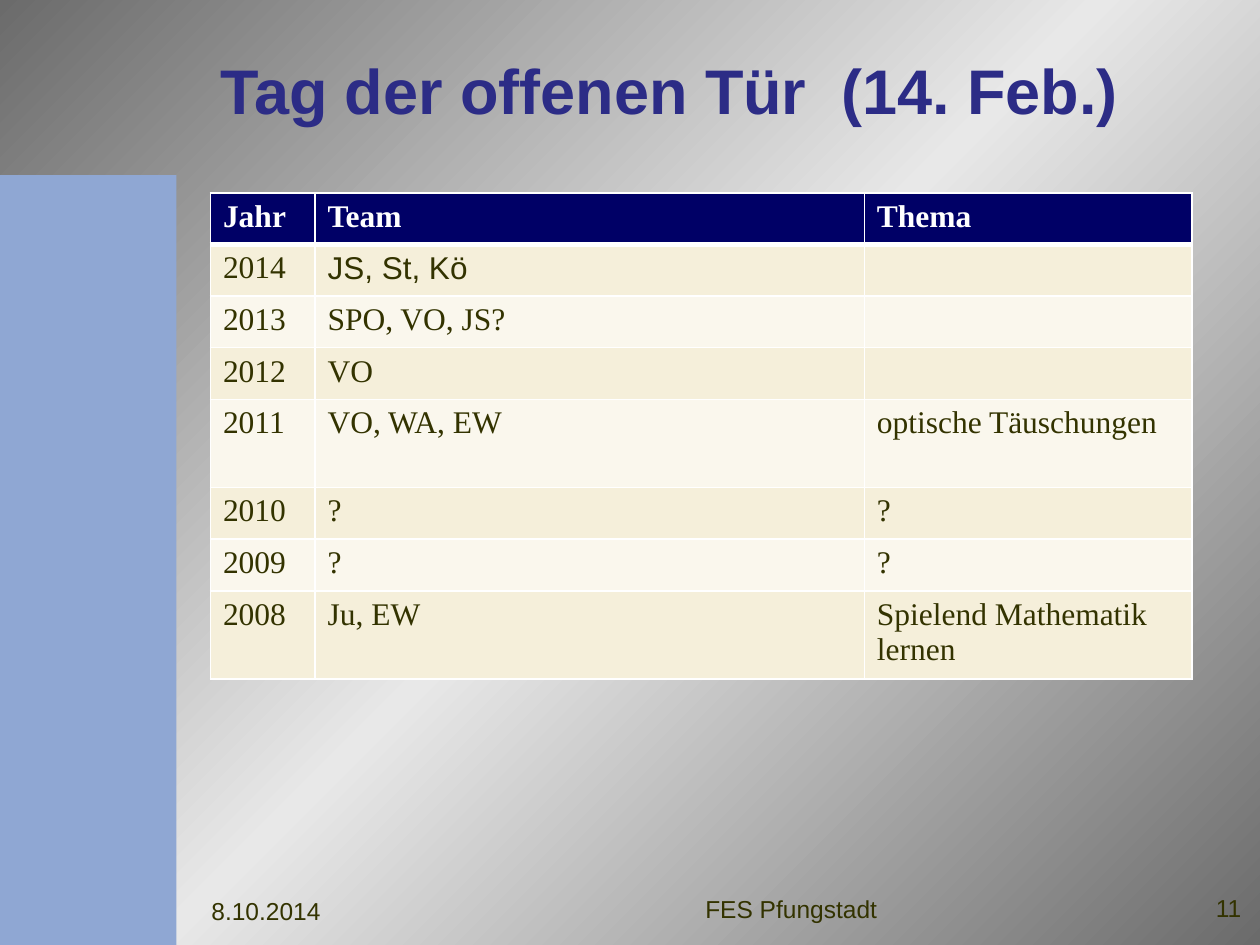
from copy import deepcopy

from lxml import etree
from pptx import Presentation
from pptx.dml.color import RGBColor
from pptx.enum.shapes import MSO_SHAPE
from pptx.enum.text import MSO_ANCHOR, PP_ALIGN
from pptx.oxml.ns import qn
from pptx.util import Inches, Pt

LEFT, CENTER, RIGHT = PP_ALIGN.LEFT, PP_ALIGN.CENTER, PP_ALIGN.RIGHT
MIDDLE = MSO_ANCHOR.MIDDLE
RECTANGLE = MSO_SHAPE.RECTANGLE

SANS, SERIF = "Arial", "Times New Roman"
TEXT, TITLE, WHITE = "333300", "2C2C86", "FFFFFF"
HEADER, BANDS = "000066", ("F5EFDA", "FAF7ED")
BACKGROUND = ((0, "6B6B6B"), (0.5, "E8E8E8"), (1, "6B6B6B"))

COLUMNS = (0.83, 4.36, 2.6)
ROW, TALL_ROW = 0.41, 0.7
TALL_YEARS = ("2011", "2008")
ROWS = (
    ("Jahr", "Team", "Thema"),
    ("2014", "JS, St, Kö", ""),
    ("2013", "SPO, VO, JS?", ""),
    ("2012", "VO", ""),
    ("2011", "VO, WA, EW", "optische Täuschungen"),
    ("2010", "?", "?"),
    ("2009", "?", "?"),
    ("2008", "Ju, EW", "Spielend Mathematik lernen"),
)


def rgb(color):
    return RGBColor.from_string(color)


def style(p, size, color, font=SANS, bold=False):
    for r in p.runs:
        r.font.name = font
        r.font.size = Pt(size)
        r.font.bold = bold
        r.font.color.rgb = rgb(color)


def add_text(s, text, box, size, color, align=LEFT, bold=False):
    tf = s.shapes.add_textbox(*map(Inches, box)).text_frame
    tf.word_wrap = True
    tf.vertical_anchor = MIDDLE
    tf.text = text
    p = tf.paragraphs[0]
    p.alignment = align
    style(p, size, color, bold=bold)


def add_background(s):
    fill = s.background.fill
    fill.gradient()
    fill.gradient_angle = 315
    # The default gradient has two stops; the light middle needs a third
    stops = s.background.fill.gradient_stops
    gs_list = s.element.find(".//" + qn("a:gsLst"))
    gs_list.insert(1, deepcopy(gs_list[0]))
    stops = s.background.fill.gradient_stops
    for stop, (position, color) in zip(stops, BACKGROUND):
        stop.position = position
        stop.color.rgb = rgb(color)


def add_side_band(s, box):
    band = s.shapes.add_shape(RECTANGLE, *map(Inches, box))
    band.shadow.inherit = False
    band.fill.solid()
    band.fill.fore_color.rgb = rgb("8FA7D3")
    band.line.fill.background()


def set_borders(cell, top, bottom):
    tc_pr = cell._tc.get_or_add_tcPr()
    widths = {"lnL": 1, "lnR": 1, "lnT": top, "lnB": bottom}
    for i, (tag, width) in enumerate(widths.items()):
        ln = etree.Element(qn("a:" + tag), w=str(Pt(width)))
        fill = etree.SubElement(ln, qn("a:solidFill"))
        etree.SubElement(fill, qn("a:srgbClr"), val=WHITE)
        tc_pr.insert(i, ln)


def add_schedule(s, left, top):
    heights = [TALL_ROW if row[0] in TALL_YEARS else ROW for row in ROWS]
    box = (left, top, sum(COLUMNS), sum(heights))
    table = s.shapes.add_table(len(ROWS), len(COLUMNS), *map(Inches, box)).table
    for column, width in zip(table.columns, COLUMNS):
        column.width = Inches(width)
    for i, (values, height) in enumerate(zip(ROWS, heights)):
        table.rows[i].height = Inches(height)
        header = i == 0
        for j, value in enumerate(values):
            cell = table.cell(i, j)
            cell.text = value
            cell.fill.solid()
            cell.fill.fore_color.rgb = rgb(HEADER if header else BANDS[(i - 1) % 2])
            font = SANS if (i, j) == (1, 1) else SERIF
            style(cell.text_frame.paragraphs[0], 18,
                  WHITE if header else TEXT, font, header)
            set_borders(cell, 3 if i == 1 else 1, 3 if header else 1)


def add_footer(s):
    add_text(s, "8.10.2014", (1.58, 6.96, 2, 0.54), 14, TEXT)
    add_text(s, "FES Pfungstadt", (4.64, 6.94, 3.28, 0.54), 14, TEXT, CENTER)
    add_text(s, "11", (8.5, 6.93, 1.45, 0.55), 14, TEXT, RIGHT)


def main():
    prs = Presentation()
    prs.slide_width, prs.slide_height = Inches(10), Inches(7.5)
    s = prs.slides.add_slide(prs.slide_layouts[6])

    # Backdrop
    add_background(s)
    add_side_band(s, (0, 1.39, 1.4, 6.11))

    # Title, table and footer
    add_text(s, "Tag der offenen Tür  (14. Feb.)", (1.65, 0.08, 8.33, 1.25),
             36, TITLE, bold=True)
    add_schedule(s, 1.67, 1.53)
    add_footer(s)

    prs.save("out.pptx")


if __name__ == "__main__":
    main()
